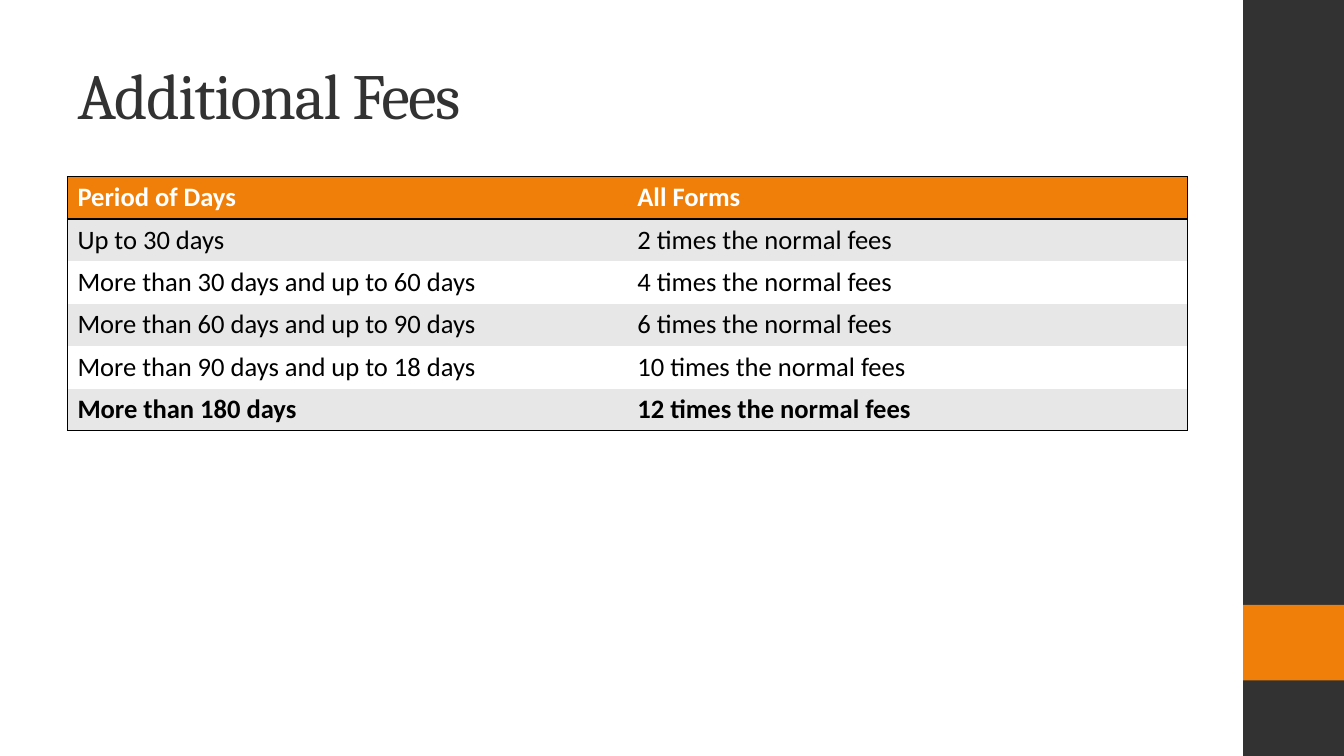
from dataclasses import dataclass

from lxml.etree import SubElement
from pptx import Presentation
from pptx.dml.color import RGBColor
from pptx.enum.shapes import MSO_SHAPE
from pptx.enum.text import MSO_ANCHOR, PP_ALIGN
from pptx.oxml.ns import qn
from pptx.util import Cm, Pt


@dataclass(frozen=True)
class Theme:
    dark: str = "323232"
    accent: str = "F07F09"
    band: str = "E7E7E7"
    white: str = "FFFFFF"
    black: str = "000000"
    head_font: str = "Cambria"
    body_font: str = "Calibri"
    head_size: int = 46
    body_size: int = 19


THEME = Theme()
WIDTH, HEIGHT = 33.87, 19.05
PLAIN_GRID = "{2D5ABB26-0587-4C30-8999-92F81FD0307C}"
FEES = [
    ("Period of Days", "All Forms"),
    ("Up to 30 days", "2 times the normal fees"),
    ("More than 30 days and up to 60 days", "4 times the normal fees"),
    ("More than 60 days and up to 90 days", "6 times the normal fees"),
    ("More than 90 days and up to 18 days", "10 times the normal fees"),
    ("More than 180 days", "12 times the normal fees"),
]


def style(run, font, size, color, bold=False):
    run.font.name = font
    run.font.size = Pt(size)
    run.font.bold = bold
    run.font.color.rgb = RGBColor.from_string(color)


def add_block(slide, box, color):
    block = slide.shapes.add_shape(MSO_SHAPE.RECTANGLE, *map(Cm, box))
    block.shadow.inherit = False
    block.fill.solid()
    block.fill.fore_color.rgb = RGBColor.from_string(color)
    block.line.fill.background()


def add_side(slide, box):
    """Dark strip with an accent band four fifths of the way down."""
    left, top, width, height = box
    add_block(slide, box, THEME.dark)
    add_block(slide, (left, top + height * 0.8, width, height * 0.1), THEME.accent)


def set_title(slide, box, text):
    title = slide.shapes.title
    title.left, title.top, title.width, title.height = map(Cm, box)
    frame = title.text_frame
    frame.text = text
    frame.vertical_anchor = MSO_ANCHOR.MIDDLE
    line = frame.paragraphs[0]
    line.alignment = PP_ALIGN.LEFT
    run = line.runs[0]
    style(run, THEME.head_font, THEME.head_size, THEME.dark)
    run.font._element.set("spc", "-100")


def add_edge(cell, side, points):
    edge = SubElement(cell._tc.get_or_add_tcPr(), qn(f"a:ln{side}"), w=str(Pt(points)))
    fill = SubElement(edge, qn("a:solidFill"))
    SubElement(fill, qn("a:srgbClr"), val=THEME.black)


def add_table(slide, box, rows):
    """Banded table with an outer frame and a heavier rule under its head."""
    last, end = len(rows) - 1, len(rows[0]) - 1
    frame = slide.shapes.add_table(last + 1, end + 1, *map(Cm, box))
    table = frame.table
    table._tbl.tblPr.find(qn("a:tableStyleId")).text = PLAIN_GRID
    for r, row in enumerate(rows):
        head = r == 0
        fill = THEME.accent if head else THEME.band if r % 2 else THEME.white
        for c, text in enumerate(row):
            cell = table.cell(r, c)
            edges = {"L": c == 0, "R": c == end, "T": head,
                     "B": 2 if head else r == last}
            for side, points in edges.items():
                if points:
                    add_edge(cell, side, int(points))
            cell.fill.solid()
            cell.fill.fore_color.rgb = RGBColor.from_string(fill)
            cell.text_frame.text = text
            style(cell.text_frame.paragraphs[0].runs[0], THEME.body_font,
                  THEME.body_size, THEME.white if head else THEME.black,
                  r in (0, last))


def main():
    deck = Presentation()
    deck.slide_width, deck.slide_height = Cm(WIDTH), Cm(HEIGHT)
    slide = deck.slides.add_slide(deck.slide_layouts[5])
    side, left, width = 2.54, 1.7, 28.22
    add_side(slide, (WIDTH - side, 0, side, HEIGHT))
    set_title(slide, (left, 0.76, width, 3.18), "Additional Fees")
    add_table(slide, (left, 4.45, width, 6.18), FEES)
    deck.save("out.pptx")


if __name__ == "__main__":
    main()
